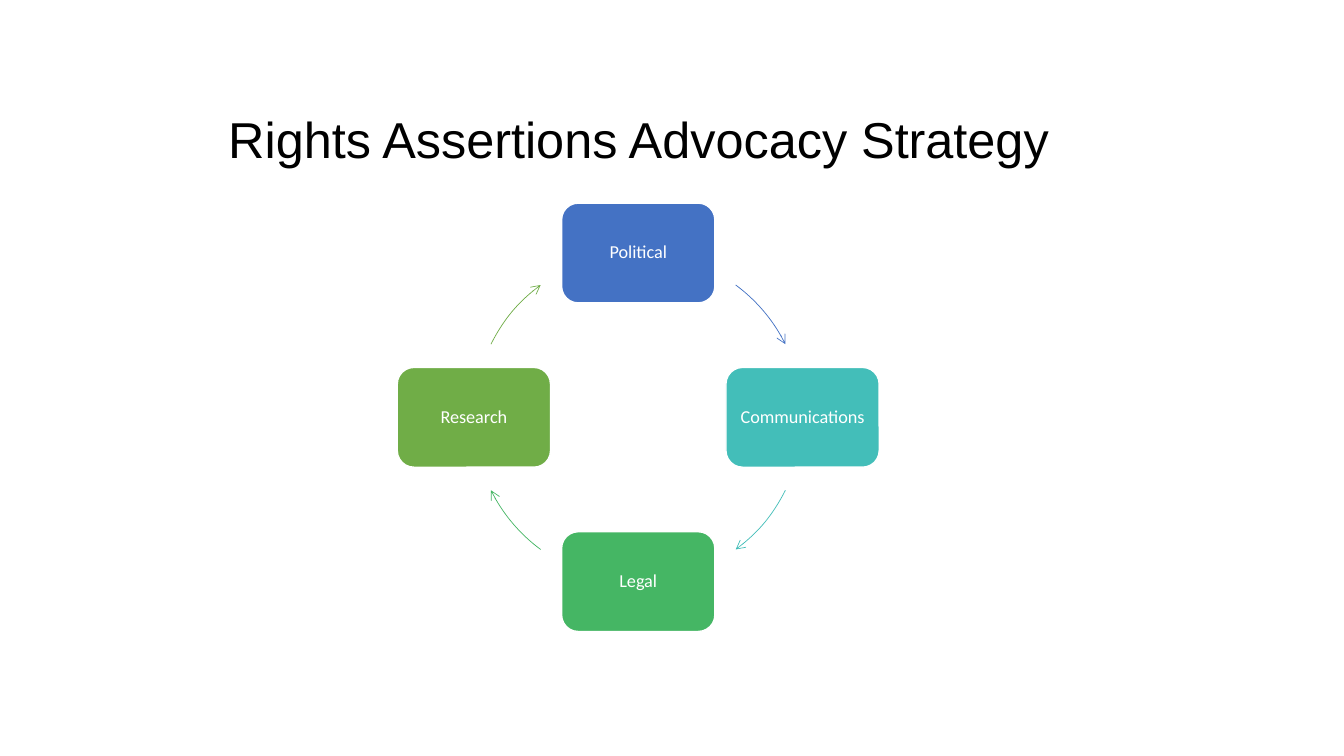
import math
from dataclasses import dataclass

from lxml import etree
from pptx import Presentation, util as u
from pptx.dml.color import RGBColor
from pptx.enum import shapes, text
from pptx.oxml import ns


@dataclass(frozen=True)
class Theme:
    ink: str = "000000"
    paper: str = "FFFFFF"
    title_font: str = "Arial"
    label_font: str = "Calibri"
    title_size: float = 36
    label_size: float = 13
    border_width: float = 1
    arrow_width: float = 0.5


def write(frame, words, *, font, size, color, margins, anchor):
    """Put one centred paragraph into a text frame."""
    frame.word_wrap = True
    frame.vertical_anchor = anchor
    frame.margin_left = frame.margin_right = u.Inches(margins[0])
    frame.margin_top = frame.margin_bottom = u.Inches(margins[1])
    para = frame.paragraphs[0]
    para.alignment = text.PP_ALIGN.CENTER
    para.line_spacing = 0.9
    span = para.add_run()
    span.text = words
    span.font.name = font
    span.font.size = u.Pt(size)
    span.font.color.rgb = RGBColor.from_string(color)


class CycleSlide:
    def __init__(self, slide, theme):
        self.slide = slide
        self.theme = theme

    def title(self, words, left, top, width, height):
        box = self.slide.shapes.add_textbox(*map(u.Inches, (left, top, width, height)))
        write(box.text_frame, words, font=self.theme.title_font,
              size=self.theme.title_size, color=self.theme.ink,
              margins=(0.1, 0.05), anchor=text.MSO_ANCHOR.TOP)

    def centred_shape(self, kind, x, y, width, height, line_color, line_width):
        shape = self.slide.shapes.add_shape(kind, *map(
            u.Inches, (x - width / 2, y - height / 2, width, height)))
        shape.shadow.inherit = False
        shape.line.color.rgb = RGBColor.from_string(line_color)
        shape.line.width = u.Pt(line_width)
        return shape

    def node(self, words, x, y, width, height, color):
        shape = self.centred_shape(shapes.MSO_SHAPE.ROUNDED_RECTANGLE, x, y, width, height,
                                   self.theme.paper, self.theme.border_width)
        shape.fill.solid()
        shape.fill.fore_color.rgb = RGBColor.from_string(color)
        write(shape.text_frame, words, font=self.theme.label_font,
              size=self.theme.label_size, color=self.theme.paper,
              margins=(0.05, 0.05), anchor=text.MSO_ANCHOR.MIDDLE)

    def arc_arrow(self, x, y, radius, start, end, color):
        arc = self.centred_shape(shapes.MSO_SHAPE.ARC, x, y, 2 * radius, 2 * radius,
                                 color, self.theme.arrow_width)
        arc.fill.background()
        # Arc angles are stored in 1/60000 degree, adjustments in 1/100000
        for index, angle in enumerate((start, end)):
            arc.adjustments[index] = angle * 0.6
        line = arc.line._get_or_add_ln()
        etree.SubElement(line, ns.qn("a:tailEnd"), type="arrow")


# Steps run clockwise from the top; each has the middle angle of its arrow
STEPS = [
    ("Political", "4472C4", 320),
    ("Communications", "43BEB9", 40),
    ("Legal", "45B664", 140),
    ("Research", "70AD47", 220),
]
CENTER_X, CENTER_Y, RADIUS = 6.33, 4.14, 1.63
NODE_WIDTH, NODE_HEIGHT = 1.52, 0.99
HALF_SWEEP = 13.6


def main():
    deck = Presentation()
    deck.slide_width, deck.slide_height = u.Inches(13.33), u.Inches(7.5)
    page = CycleSlide(deck.slides.add_slide(deck.slide_layouts[6]), Theme())

    # Heading
    page.title("Rights Assertions Advocacy Strategy", 2, 1.09, 8.67, 0.85)

    # Cycle of steps and arrows
    for index, (words, color, middle) in enumerate(STEPS):
        turn = math.radians(90 * index - 90)
        page.node(words, CENTER_X + RADIUS * math.cos(turn),
                  CENTER_Y + RADIUS * math.sin(turn), NODE_WIDTH, NODE_HEIGHT, color)
        page.arc_arrow(CENTER_X, CENTER_Y, RADIUS,
                       middle - HALF_SWEEP, middle + HALF_SWEEP, color)

    deck.save("out.pptx")


if __name__ == "__main__":
    main()
